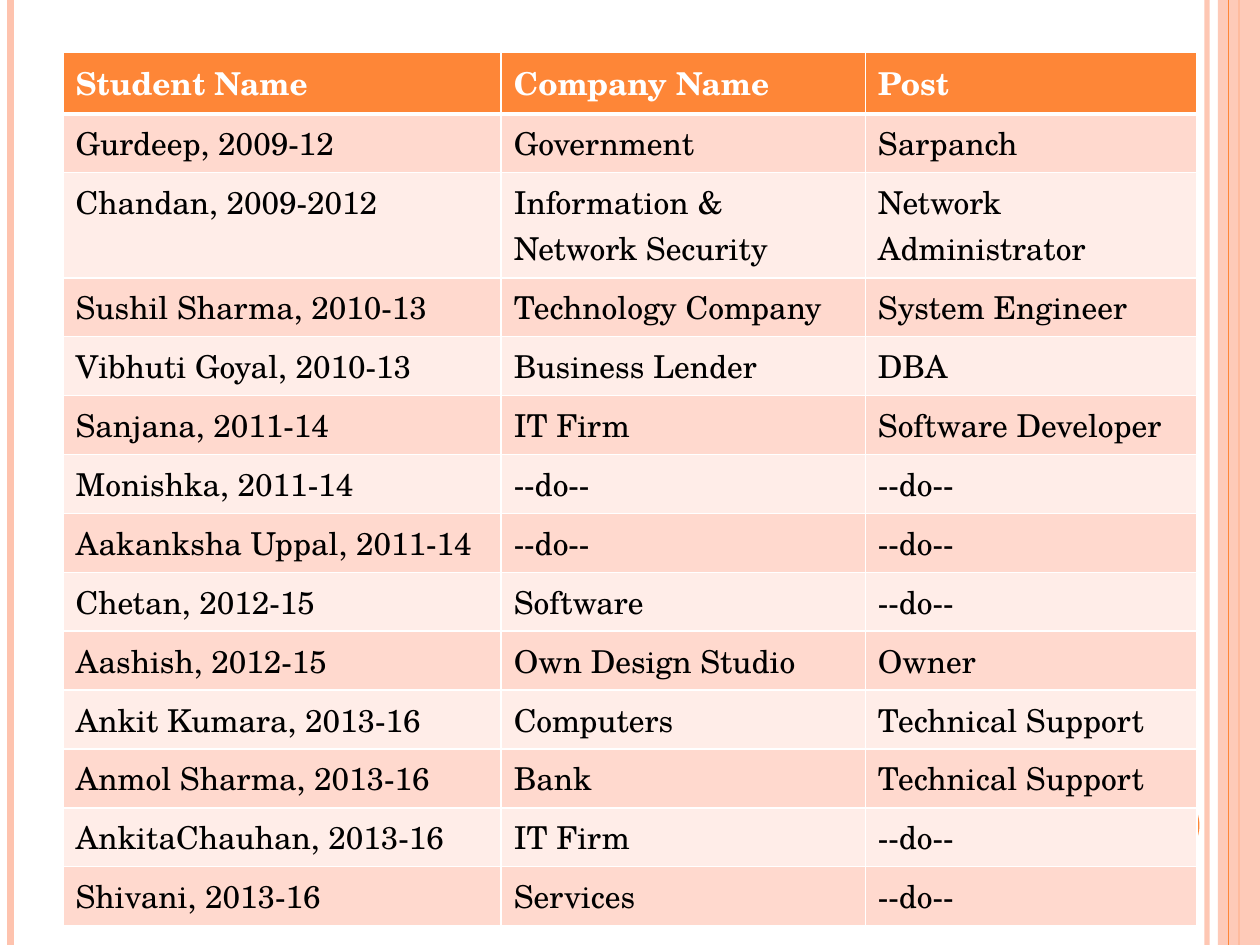
from pptx import Presentation
from pptx.dml.color import RGBColor
from pptx.enum.shapes import MSO_CONNECTOR, MSO_SHAPE
from pptx.oxml.ns import qn
from pptx.util import Pt
from lxml import etree

STRAIGHT = MSO_CONNECTOR.STRAIGHT
RECTANGLE, OVAL = MSO_SHAPE.RECTANGLE, MSO_SHAPE.OVAL

PAGE_WIDTH, PAGE_HEIGHT = 720, 540
FONT = "TeX Gyre Schola"
ORANGE, PEACH, WHITE, BLACK = "FE8637", "FEC3AE", "FFFFFF", "000000"
BANDS = ("FFD9CE", "FFEDE8")
COLUMN_WIDTHS = (250.4, 208.1, 189.5)
ROW_HEIGHT = 33.1

# x, line width, colour, opacity in percent
STRIPES = (
    (689.8, 3, PEACH, 93),
    (6, 4.5, PEACH, 100),
    (708, 1.5, ORANGE, 100),
    (702, 0.75, ORANGE, 100),
)

PLACEMENTS = (
    ("Student Name", "Company Name", "Post"),
    ("Gurdeep, 2009-12", "Government", "Sarpanch"),
    ("Chandan, 2009-2012", "Information & Network Security", "Network Administrator"),
    ("Sushil Sharma, 2010-13", "Technology Company", "System Engineer"),
    ("Vibhuti Goyal, 2010-13", "Business Lender", "DBA"),
    ("Sanjana, 2011-14", "IT Firm", "Software Developer"),
    ("Monishka, 2011-14", "--do--", "--do--"),
    ("Aakanksha Uppal, 2011-14", "--do--", "--do--"),
    ("Chetan, 2012-15", "Software", "--do--"),
    ("Aashish, 2012-15", "Own Design Studio", "Owner"),
    ("Ankit Kumara, 2013-16", "Computers", "Technical Support"),
    ("Anmol Sharma, 2013-16", "Bank", "Technical Support"),
    ("AnkitaChauhan, 2013-16", "IT Firm", "--do--"),
    ("Shivani, 2013-16", "Services", "--do--"),
)


def rgb(color):
    return RGBColor.from_string(color)


def set_opacity(shape, percent):
    """Make the first solid colour of a shape or connector partly transparent."""
    color = shape._element.spPr.find(".//" + qn("a:srgbClr"))
    etree.SubElement(color, qn("a:alpha"), val=str(percent * 1000))


def add_stripe(page, x, width, color, opacity):
    stripe = page.shapes.add_connector(STRAIGHT, Pt(x), 0, Pt(x), Pt(PAGE_HEIGHT))
    stripe.line.width = Pt(width)
    stripe.line.color.rgb = rgb(color)
    etree.SubElement(stripe._element.spPr, qn("a:effectLst"))
    if opacity < 100:
        set_opacity(stripe, opacity)


def add_plain_shape(page, kind, box, color):
    shape = page.shapes.add_shape(kind, *map(Pt, box))
    shape.shadow.inherit = False
    shape.fill.solid()
    shape.fill.fore_color.rgb = rgb(color)
    shape.line.fill.background()
    return shape


def add_decoration(page):
    for stripe in STRIPES[:3]:
        add_stripe(page, *stripe)
    band = add_plain_shape(page, RECTANGLE, (696, 0, 24, PAGE_HEIGHT), PEACH)
    set_opacity(band, 87)
    add_stripe(page, *STRIPES[3])
    add_plain_shape(page, OVAL, (642.24, 450, 43.2, 43.2), ORANGE)


def set_borders(cell, widths):
    """Draw white borders; widths maps a side (L, R, T, B) to points."""
    properties = cell._tc.get_or_add_tcPr()
    for position, (side, width) in enumerate(widths.items()):
        line = etree.Element(qn(f"a:ln{side}"), w=str(Pt(width)))
        fill = etree.SubElement(line, qn("a:solidFill"))
        etree.SubElement(fill, qn("a:srgbClr"), val=WHITE)
        properties.insert(position, line)


def fill_cell(cell, text, row):
    header = row == 0
    cell.text = text
    cell.fill.solid()
    cell.fill.fore_color.rgb = rgb(ORANGE if header else BANDS[(row - 1) % 2])
    span = cell.text_frame.paragraphs[0].runs[0]
    for name, value in {"name": FONT, "size": Pt(18), "bold": header}.items():
        setattr(span.font, name, value)
    span.font.color.rgb = rgb(WHITE if header else BLACK)
    set_borders(cell, {"L": 1, "R": 1, "T": 3 if row == 1 else 1, "B": 3 if header else 1})


def add_placements(page, left, top):
    frame = page.shapes.add_table(
        len(PLACEMENTS), len(COLUMN_WIDTHS), Pt(left), Pt(top),
        Pt(sum(COLUMN_WIDTHS)), Pt(ROW_HEIGHT * len(PLACEMENTS)))
    table = frame.table
    for column, width in zip(table.columns, COLUMN_WIDTHS):
        column.width = Pt(width)
    for row, texts in enumerate(PLACEMENTS):
        table.rows[row].height = Pt(ROW_HEIGHT)
        for column, text in enumerate(texts):
            fill_cell(table.cell(row, column), text, row)


def main():
    deck = Presentation()
    deck.slide_width, deck.slide_height = Pt(PAGE_WIDTH), Pt(PAGE_HEIGHT)
    page = deck.slides.add_slide(deck.slide_layouts[6])
    page.background.fill.solid()
    page.background.fill.fore_color.rgb = rgb(WHITE)
    add_decoration(page)
    add_placements(page, 36, 30)
    deck.save("out.pptx")


if __name__ == "__main__":
    main()
